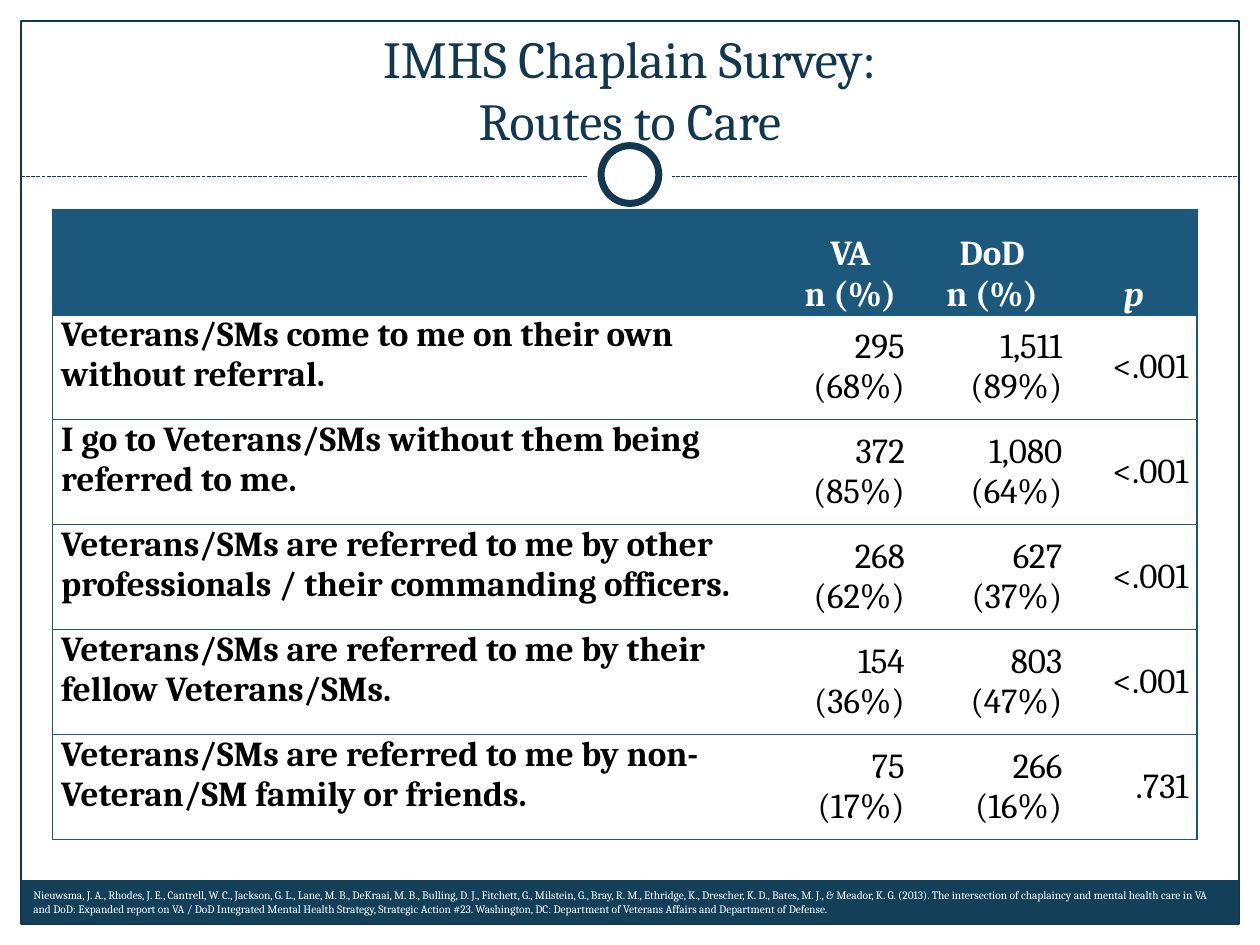
from lxml import etree
from pptx import Presentation
from pptx.dml.color import RGBColor
from pptx.enum import dml, shapes, text
from pptx.oxml import ns
from pptx.util import Pt

COLORS = {"navy": "11384F", "band": "133F59", "blue": "1B587C",
          "white": "FFFFFF", "black": "000000"}
FONT = "Cambria"
PLAIN_TABLE_STYLE = "{2D5ABB26-0587-4C30-8999-92F81FD0307C}"
ALIGN, ANCHOR = text.PP_ALIGN, text.MSO_ANCHOR

HEADER = ["", "VA\nn (%)", "DoD\nn (%)", "p"]
ROUTES = [
    ("Veterans/SMs come to me on their own without referral.",
     "295 (68%)", "1,511 (89%)", "<.001"),
    ("I go to Veterans/SMs without them being referred to me.",
     "372 (85%)", "1,080 (64%)", "<.001"),
    ("Veterans/SMs are referred to me by other professionals / their commanding officers.",
     "268 (62%)", "627 (37%)", "<.001"),
    ("Veterans/SMs are referred to me by their fellow Veterans/SMs.",
     "154 (36%)", "803 (47%)", "<.001"),
    ("Veterans/SMs are referred to me by non-Veteran/SM family or friends.",
     "75 (17%)", "266 (16%)", ".731"),
]
CITATION = (
    "Nieuwsma, J. A., Rhodes, J. E., Cantrell, W. C., Jackson, G. L., Lane, M. B., "
    "DeKraai, M. B., Bulling, D. J., Fitchett, G., Milstein, G., Bray, R. M., "
    "Ethridge, K., Drescher, K. D., Bates, M. J., & Meador, K. G. (2013). "
    "The intersection of chaplaincy and mental health care in VA and DoD: "
    "Expanded report on VA / DoD Integrated Mental Health Strategy, Strategic Action #23. "
    "Washington, DC: Department of Veterans Affairs and Department of Defense.")


def rgb(name):
    return RGBColor.from_string(COLORS[name])


def format_text(frame, size, color, align, bold=False, italic=False):
    for paragraph in frame.paragraphs:
        paragraph.alignment = align
        font = paragraph.font
        font.name, font.size = FONT, Pt(size)
        font.bold, font.italic = bold, italic
        font.color.rgb = rgb(color)


def add_plain_shape(slide, kind, box, fill=None, line=None, weight=0.75):
    shape = slide.shapes.add_shape(kind, *map(Pt, box))
    shape.shadow.inherit = False
    if fill:
        shape.fill.solid()
        shape.fill.fore_color.rgb = rgb(fill)
    else:
        shape.fill.background()
    if line:
        shape.line.color.rgb = rgb(line)
        shape.line.width = Pt(weight)
    else:
        shape.line.fill.background()


def add_frame(slide, left, top, width, height):
    """Outline, footer band, and the dashed divider with its ring."""
    rect, oval = shapes.MSO_SHAPE.RECTANGLE, shapes.MSO_SHAPE.OVAL
    band = 25
    add_plain_shape(slide, rect, (left, top + height - band, width, band), "band")
    add_plain_shape(slide, rect, (left, top, width, height), line="navy")

    divider_y = top + 89
    divider = slide.shapes.add_connector(
        shapes.MSO_CONNECTOR.STRAIGHT,
        Pt(left), Pt(divider_y), Pt(left + width), Pt(divider_y))
    divider.line.color.rgb = rgb("navy")
    divider.line.width = Pt(0.75)
    divider.line.dash_style = dml.MSO_LINE.SQUARE_DOT
    etree.SubElement(divider._element.spPr, ns.qn("a:effectLst"))

    center_x, center_y = left + width / 2, divider_y - 1.25
    for size, line in ((48, None), (33, "navy")):
        box = (center_x - size / 2, center_y - size / 2, size, size)
        add_plain_shape(slide, oval, box, "white", line, weight=4)


def place_title(slide, left, top, width, height):
    title = slide.shapes.title
    title.left, title.top, title.width, title.height = map(Pt, (left, top, width, height))
    frame = title.text_frame
    frame.text = "IMHS Chaplain Survey:\vRoutes to Care"
    frame.auto_size = text.MSO_AUTO_SIZE.NONE
    frame.vertical_anchor = ANCHOR.BOTTOM
    format_text(frame, 29.7, "navy", ALIGN.CENTER)
    slide.shapes._spTree.append(title._element)  # in front of the ring


def set_borders(cell, sides):
    """Draw the given sides, listed in the order L, R, T, B."""
    properties = cell._tc.get_or_add_tcPr()
    for position, side in enumerate(sides):
        line = etree.Element(ns.qn(f"a:ln{side}"), w=str(Pt(0.75)))
        fill = etree.SubElement(line, ns.qn("a:solidFill"))
        etree.SubElement(fill, ns.qn("a:srgbClr"), val=COLORS["blue"])
        properties.insert(position, line)


def fill_cell(cell, words, row, column):
    is_header, is_route = row == 0, column == 0
    cell.text = words
    cell.margin_left = cell.margin_right = Pt(5)
    cell.margin_top = cell.margin_bottom = 0
    cell.fill.solid()
    cell.fill.fore_color.rgb = rgb("blue" if is_header else "white")
    if is_header:
        cell.vertical_anchor, align = ANCHOR.BOTTOM, ALIGN.CENTER
    elif is_route:
        cell.vertical_anchor, align = ANCHOR.TOP, ALIGN.LEFT
    else:
        cell.vertical_anchor, align = ANCHOR.MIDDLE, ALIGN.RIGHT
    format_text(cell.text_frame, 20, "white" if is_header else "black", align,
                bold=is_header or is_route, italic=words == "p")
    outer_side = {0: "L", len(HEADER) - 1: "R"}.get(column, "")
    set_borders(cell, outer_side + "TB")


def add_routes_table(slide, left, top, column_widths, row_height):
    rows = [HEADER, *ROUTES]
    graphic = slide.shapes.add_table(
        len(rows), len(HEADER), Pt(left), Pt(top),
        Pt(sum(column_widths)), Pt(row_height * len(rows)))
    table = graphic.table
    table.horz_banding = False
    table._tbl.tblPr.find(ns.qn("a:tableStyleId")).text = PLAIN_TABLE_STYLE
    for column, width in zip(table.columns, column_widths):
        column.width = Pt(width)
    for r, row in enumerate(rows):
        table.rows[r].height = Pt(row_height)
        for c, words in enumerate(row):
            fill_cell(table.cell(r, c), words, r, c)


def add_citation(slide, left, top, width, height):
    citation = slide.shapes.add_textbox(*map(Pt, (left, top, width, height)))
    frame = citation.text_frame
    frame.word_wrap = True
    frame.text = CITATION
    format_text(frame, 6.5, "white", ALIGN.LEFT)


def main():
    deck = Presentation()
    deck.slide_width, deck.slide_height = Pt(720), Pt(540)
    slide = deck.slides.add_slide(deck.slide_layouts[5])
    add_frame(slide, 12, 12, 696, 516)
    place_title(slide, 24, 30, 672, 60)
    add_routes_table(slide, 30, 120, (420, 72, 90, 72), 60)
    add_citation(slide, 12, 504, 690, 23)
    deck.save("out.pptx")


if __name__ == "__main__":
    main()
